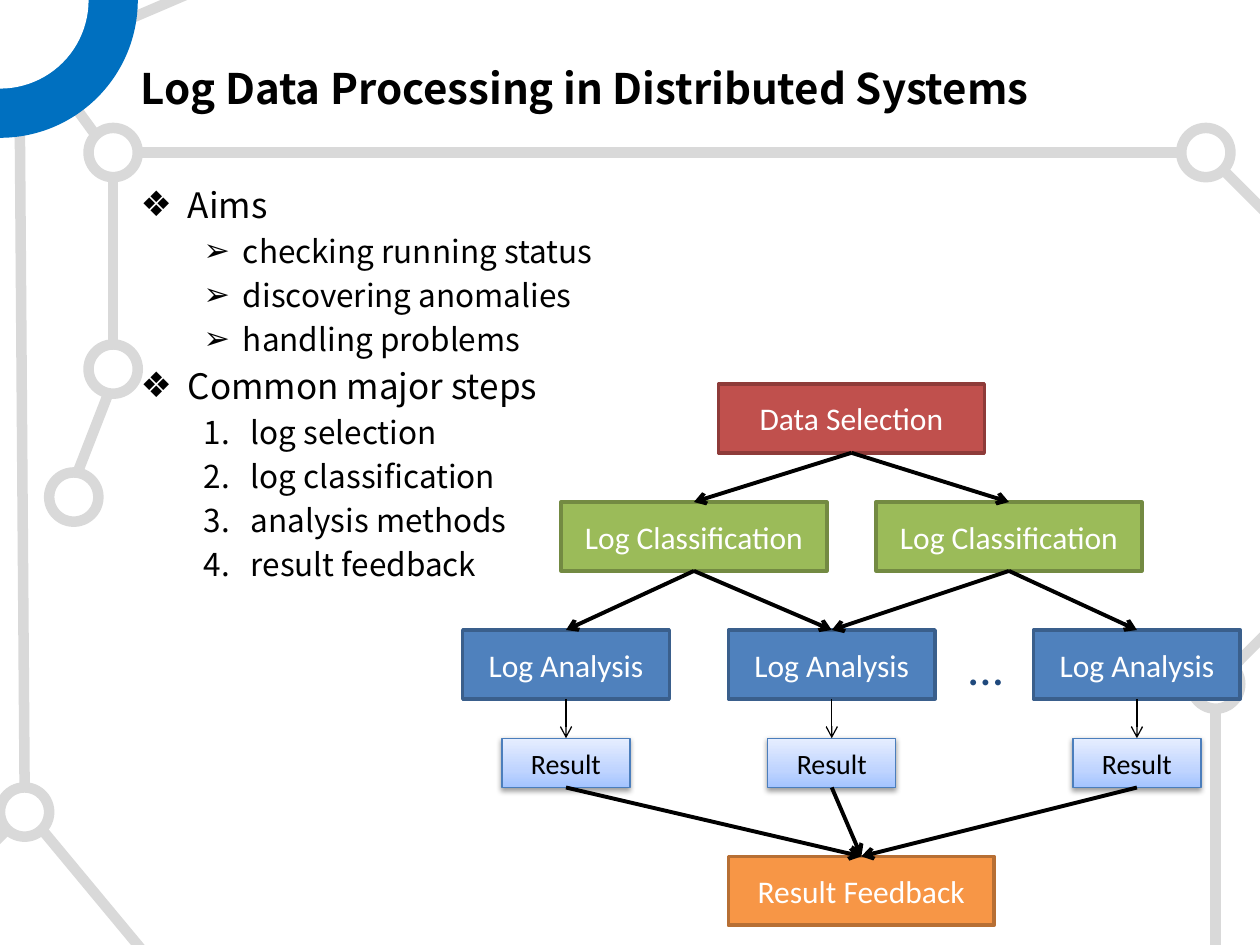
from copy import deepcopy
from dataclasses import dataclass
from lxml.etree import SubElement
from pptx import Presentation
from pptx.dml.color import RGBColor
from pptx.enum.shapes import MSO_CONNECTOR, MSO_SHAPE
from pptx.enum.text import MSO_ANCHOR, MSO_AUTO_SIZE, PP_ALIGN
from pptx.oxml.ns import qn
from pptx.util import Inches, Pt

COLS, ROWS = 128, 96
UNIT = Inches(10) / COLS


@dataclass(frozen=True)
class Theme:
    text: str = "000000"
    light: str = "FFFFFF"
    network: str = "D9D9D9"
    corner: str = "0070C0"
    dots: str = "1F497D"
    select: tuple = ("C0504D", "8E3B39")
    classify: tuple = ("9BBB59", "738A42")
    analyse: tuple = ("4F81BD", "3A5F8C")
    feedback: tuple = ("F79646", "B76F34")
    result_line: str = "4B7EBC"
    result_stops: tuple = ((0, "A4C4FF"), (0.35, "BFD4FF"), (1, "E6EEFF"))
    font: str = "Noto Sans CJK SC"
    label_font: str = "Calibri"
    title: int = 24
    body: int = 20
    sub: int = 18
    label: int = 18
    result: int = 16
    ellipsis: int = 28


T = Theme()


def u(*cells):
    return [round(c * UNIT) for c in cells]


def rgb(color):
    return RGBColor.from_string(color)


def write(p, text, size, font=T.font, color=T.text, bold=False, align=PP_ALIGN.LEFT):
    p.alignment = align
    r = p.add_run()
    r.text = text
    r.font.name, r.font.size, r.font.bold = font, Pt(size), bold
    r.font.color.rgb = rgb(color)


def shape(s, kind, box, fill, line=None, width=2):
    sp = s.shapes.add_shape(kind, *u(*box))
    sp.shadow.inherit = False
    sp.fill.solid()
    sp.fill.fore_color.rgb = rgb(fill)
    if line:
        sp.line.color.rgb, sp.line.width = rgb(line), Pt(width)
    else:
        sp.line.fill.background()
    return sp


def line(s, start, end, color, width, arrow=False):
    c = s.shapes.add_connector(MSO_CONNECTOR.STRAIGHT, *u(*start, *end))
    c.line.color.rgb, c.line.width = rgb(color), Pt(width)
    SubElement(c._element.spPr, qn("a:effectLst"))
    if arrow:
        SubElement(c.line._get_or_add_ln(), qn("a:tailEnd"), type="arrow")
    return c


def link(s, upper, lower, width=2.25):
    c = line(s, (0, 0), (0, 0), T.text, width, arrow=True)
    c.begin_connect(upper, 2)
    c.end_connect(lower, 0)


def node(s, text, box, colors, width=2, size=T.label, color=T.light):
    sp = shape(s, MSO_SHAPE.RECTANGLE, box, *colors, width)
    tf = sp.text_frame
    tf.vertical_anchor = MSO_ANCHOR.MIDDLE
    write(tf.paragraphs[0], text, size, T.label_font, color, align=PP_ALIGN.CENTER)
    return sp


def result_node(s, box):
    sp = node(s, "Result", box, (T.light, T.result_line), 0.75, T.result, T.text)
    sp.fill.gradient()
    sp.fill.gradient_angle = 90
    stops = sp._element.xpath(".//a:gsLst")[0]
    stops.append(deepcopy(stops[0]))
    for stop, (pos, color) in zip(sp.fill.gradient_stops, T.result_stops):
        stop.position, stop.color.rgb = pos, rgb(color)
    effects = sp._element.spPr.find(qn("a:effectLst"))
    shadow = SubElement(effects, qn("a:outerShdw"), blurRad=str(Pt(3.1)),
                        dist=str(Pt(1.6)), dir="5400000", rotWithShape="0")
    black = SubElement(shadow, qn("a:srgbClr"), val=T.text)
    SubElement(black, qn("a:alpha"), val="38000")
    return sp


def network(s, x, y, w, h):
    right, bottom = x + w, y + h
    for start, end in (
        ((x + 13, y + 2), (x + 20, y - 1)),
        ((x + 2, y + 10), (x + 2.5, y + 80)),
        ((x + 7, y + 10), (x + 9.7, y + 13.7)),
        ((x + 14, y + 15.5), (right - 8, y + 15.5)),
        ((x + 11.5, y + 18), (x + 11.5, y + 35)),
        ((x + 11, y + 40), (x + 8, y + 47.7)),
        ((x - 2, bottom - 9), (x + 0.8, bottom - 11.8)),
        ((x + 4.2, bottom - 11.8), (x + 15, bottom + 1.2)),
        ((right - 3.7, y + 17.3), (right + 1, y + 22)),
        ((right + 2, y + 63), (right - 2.7, y + 67.7)),
        ((right - 4.5, y + 72), (right - 4.5, bottom)),
    ):
        line(s, start, end, T.network, 6)
    for left, top in ((9, 13), (w - 8, 13), (0, 80), (9, 35), (5, 48), (w - 7, 67)):
        shape(s, MSO_SHAPE.OVAL, (x + left, y + top, 5, 5), T.light, T.network, 6)
    for radius, color in ((14, T.corner), (9, T.light)):
        pie = shape(s, MSO_SHAPE.PIE, (x - radius, y - radius, 2 * radius, 2 * radius), color)
        pie.adjustments[0], pie.adjustments[1] = 0, 54


def place(s, sp, box):
    s.shapes._spTree.append(sp._element)
    sp.left, sp.top, sp.width, sp.height = u(*box)
    sp.text_frame.auto_size = MSO_AUTO_SIZE.NONE
    return sp.text_frame


def title(s, text, *box):
    tf = place(s, s.shapes.title, box)
    tf.vertical_anchor = MSO_ANCHOR.MIDDLE
    write(tf.paragraphs[0], text, T.title, bold=True)


def bullet(p, left, hanging, tag, **mark):
    p.space_before = Pt(p.runs[0].font.size.pt * 0.2)
    pPr = p._p.get_or_add_pPr()
    pPr.set("marL", str(Pt(left)))
    pPr.set("indent", str(-Pt(hanging)))
    SubElement(pPr, qn(tag), **mark)


def outline(s, sections, *box):
    tf = place(s, s.placeholders[1], box)
    tf.vertical_anchor = MSO_ANCHOR.TOP
    p = tf.paragraphs[0]
    for i, (heading, numbered, items) in enumerate(sections):
        p = tf.add_paragraph() if i else p
        write(p, heading, T.body)
        bullet(p, 27, 27, "a:buChar", char="❖")
        for item in items:
            p = tf.add_paragraph()
            p.level = 1
            write(p, item, T.sub)
            if numbered:
                bullet(p, 63, 27, "a:buAutoNum", type="arabicPeriod")
            else:
                bullet(p, 58.5, 22.5, "a:buChar", char="➢")


def flow(s, x, y, w, h):
    wide, narrow, tall = 27, 21, 7
    select = node(s, "Data Selection", (x + 26, y, wide, tall), T.select)
    classes = [node(s, "Log Classification", (x + dx, y + 12, wide, tall), T.classify)
               for dx in (10, 42)]
    columns = (0, 27, w - narrow)
    analyses = [node(s, "Log Analysis", (x + dx, y + 25, narrow, tall), T.analyse)
                for dx in columns]
    results = [result_node(s, (x + dx + 4, y + 36, narrow - 8, 5)) for dx in columns]
    feedback = node(s, "Result Feedback", (x + 27, y + h - tall, wide, tall), T.feedback)

    dots = s.shapes.add_textbox(*u(x + 50, y + 25, 6.4, 7.3))
    dots.text_frame.word_wrap = False
    write(dots.text_frame.paragraphs[0], "...", T.ellipsis, T.label_font, T.dots)

    for i, group in enumerate(classes):
        link(s, select, group)
        for analysis in analyses[i:i + 2]:
            link(s, group, analysis)
    for analysis, result in zip(analyses, results):
        link(s, analysis, result, 0.75)
        link(s, result, feedback)


def main():
    prs = Presentation()
    prs.slide_width, prs.slide_height = u(COLS, ROWS)
    s = prs.slides.add_slide(prs.slide_layouts[1])
    network(s, 0, 0, COLS, ROWS)
    title(s, "Log Data Processing in Distributed Systems", 13, 3.9, 108.5, 10.1)
    outline(s, (
        ("Aims", False,
         ("checking running status", "discovering anomalies", "handling problems")),
        ("Common major steps", True,
         ("log selection", "log classification", "analysis methods", "result feedback")),
    ), 13, 18, 108.5, 67.7)
    flow(s, 47, 39, 79, 55)
    prs.save("out.pptx")


if __name__ == "__main__":
    main()
